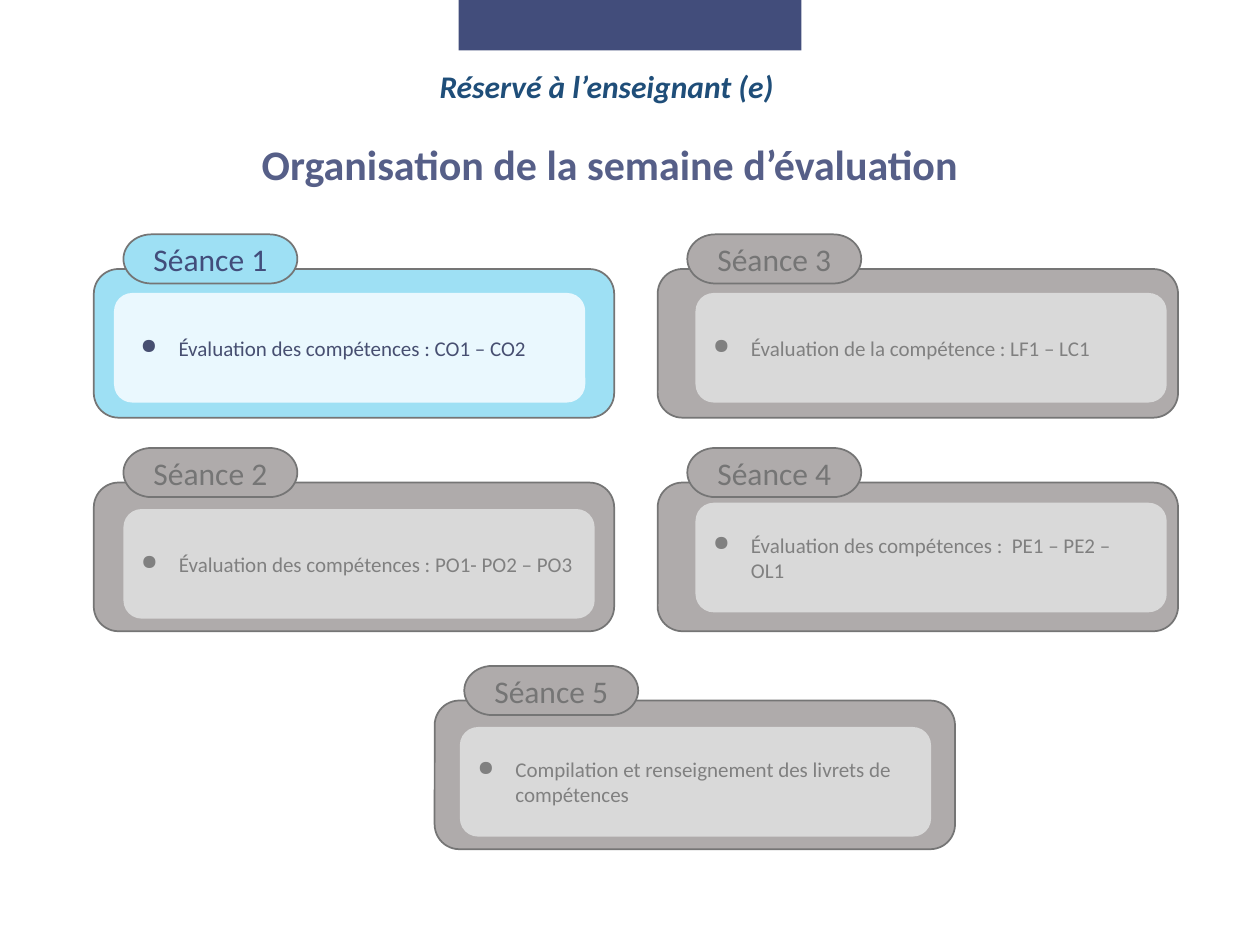
import pptx
import pptx.util
from lxml import etree
from pptx.dml.color import RGBColor
from pptx.enum.shapes import MSO_SHAPE
from pptx.enum.text import MSO_ANCHOR, PP_ALIGN
from pptx.oxml.ns import qn

COLORS = {
    "navy": "424D7B", "title": "565F88", "subtitle": "1F4E79",
    "outline": "757575", "blue": "9EE0F4", "pale_blue": "EAF8FE",
    "ink": "474F71", "gray": "AFABAB", "pale_gray": "D9D9D9", "muted": "808080",
}
ACTIVE = {"card": "blue", "label": "navy", "panel": "pale_blue", "text": "ink"}
INACTIVE = {"card": "gray", "label": "outline", "panel": "pale_gray", "text": "muted"}
COLUMNS, ROWS = 100, 75


class SlideBuilder:
    """Holds the style and the slide; lengths are grid columns and rows."""

    def __init__(self, presentation):
        self.font = "Calibri"
        self.column = presentation.slide_width / COLUMNS
        self.row = presentation.slide_height / ROWS
        self.slide = presentation.slides.add_slide(presentation.slide_layouts[6])

    def place(self, left, top, width, height):
        return [round(length) for length in (left * self.column, top * self.row,
                                             width * self.column, height * self.row)]

    def set_text(self, shape, text, size, color, align=PP_ALIGN.CENTER, bold=False,
                 italic=False, bullet=False, anchor=MSO_ANCHOR.MIDDLE):
        frame = shape.text_frame
        frame.word_wrap = True
        frame.vertical_anchor = anchor
        frame.text = text
        paragraph = frame.paragraphs[0]
        paragraph.alignment = align
        if bullet:
            properties = paragraph._p.get_or_add_pPr()
            indent = pptx.util.Inches(0.3)
            properties.set("marL", str(indent))
            properties.set("indent", str(-indent))
            etree.SubElement(properties, qn("a:buChar")).set("char", "●")
        for run in paragraph.runs:
            run.font.name = self.font
            run.font.size = pptx.util.Pt(size)
            run.font.bold = bold
            run.font.italic = italic
            run.font.color.rgb = RGBColor.from_string(COLORS[color])
        return paragraph

    def heading(self, box, text, size, color, **style):
        shape = self.slide.shapes.add_textbox(*self.place(*box))
        self.set_text(shape, text, size, color, bold=True, **style).line_spacing = 0.9

    def block(self, kind, box, fill, outlined=False):
        shape = self.slide.shapes.add_shape(kind, *self.place(*box))
        shape.shadow.inherit = False
        shape.fill.solid()
        shape.fill.fore_color.rgb = RGBColor.from_string(COLORS[fill])
        if outlined:
            shape.line.color.rgb = RGBColor.from_string(COLORS["outline"])
            shape.line.width = pptx.util.Pt(1)
        else:
            shape.line.fill.background()
        return shape

    def session(self, number, left, top, panel_offset, text, theme, inset=0.1):
        # Card, its label on the top edge, then the inner panel
        self.block(MSO_SHAPE.ROUNDED_RECTANGLE, (left, top, 41.3, 11.8),
                   theme["card"], outlined=True)
        label = self.block(MSO_SHAPE.FLOWCHART_TERMINATOR,
                           (left + 2.35, top - 2.75, 13.8, 3.9),
                           theme["card"], outlined=True)
        self.set_text(label, f"Séance {number}", 18, theme["label"])
        across, down = panel_offset
        panel = self.block(MSO_SHAPE.ROUNDED_RECTANGLE,
                           (left + across, top + down, 37.4, 8.7), theme["panel"])
        panel.text_frame.margin_left = pptx.util.Inches(inset)
        self.set_text(panel, text, 12, theme["text"], align=PP_ALIGN.LEFT, bullet=True)


def main():
    presentation = pptx.Presentation()
    presentation.slide_width = pptx.util.Inches(10)
    presentation.slide_height = pptx.util.Inches(7.5)
    builder = SlideBuilder(presentation)

    # Header
    builder.block(MSO_SHAPE.RECTANGLE, (36.4, 0, 27.2, 4), "navy")
    builder.heading((33.6, 5.2, 29.1, 6.7), "Réservé à l’enseignant (e)", 18,
                    "subtitle", italic=True, anchor=MSO_ANCHOR.TOP)
    builder.heading((5.3, 9.3, 86.2, 7.9), "Organisation de la semaine d’évaluation",
                    24, "title")

    # Sessions: two columns of two, and the last one below
    left, right = 7.45, 52.2
    first, second, third = 21.35, 38.3, 55.6
    builder.session(1, left, first, (1.6, 1.9),
                    "Évaluation des compétences : CO1 – CO2", ACTIVE, inset=0.17)
    builder.session(2, left, second, (2.35, 2.1),
                    "Évaluation des compétences : PO1- PO2 – PO3", INACTIVE)
    builder.session(3, right, first, (3, 1.9),
                    "Évaluation de la compétence : LF1 – LC1", INACTIVE)
    builder.session(4, right, second, (3, 1.6),
                    "Évaluation des compétences :  PE1 – PE2 – OL1", INACTIVE)
    builder.session(5, 34.5, third, (2, 2.1),
                    "Compilation et renseignement des livrets de compétences", INACTIVE)

    presentation.save("out.pptx")


if __name__ == "__main__":
    main()
